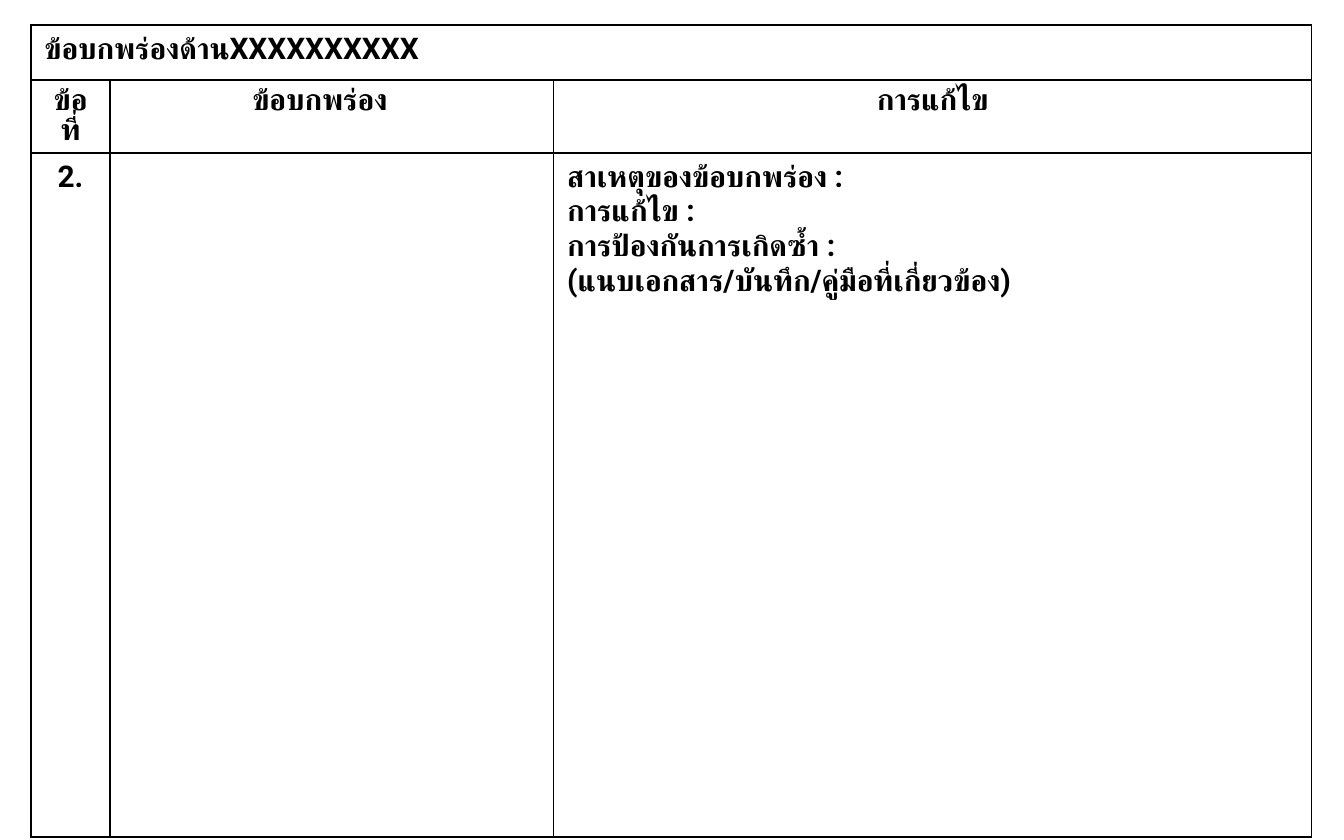
from lxml import etree
from pptx import Presentation
from pptx import util as u
from pptx.dml.color import RGBColor
from pptx.enum import text
from pptx.oxml.ns import qn

COLORS = {"ink": "000000", "paper": "FFFFFF"}
WIDTH, HEIGHT = 10, 6.25


class Deck:
    """Holds the text style and the current slide."""
    font, size, border = "Roboto", 16, 1

    def __init__(self, prs):
        self.prs = prs
        self.s = prs.slides.add_slide(prs.slide_layouts[6])

    def table(self, left, top, cols, rows):
        """Add a plain bordered table; left and top are shares of the slide."""
        x, y = int(self.prs.slide_width * left), int(self.prs.slide_height * top)
        frame = self.s.shapes.add_table(len(rows), len(cols), x, y,
                                        u.Inches(sum(cols)), u.Inches(sum(rows)))
        tbl = frame.table
        tbl.first_row = tbl.horz_banding = False
        for col, width in zip(tbl.columns, cols):
            col.width = u.Inches(width)
        for row, height in zip(tbl.rows, rows):
            row.height = u.Inches(height)
        for cell in tbl.iter_cells():
            self.borders(cell)
            cell.fill.solid()
            cell.fill.fore_color.rgb = RGBColor.from_string(COLORS["paper"])
        return tbl

    def borders(self, cell):
        tc_pr = cell._tc.get_or_add_tcPr()
        for side in ("a:lnL", "a:lnR", "a:lnT", "a:lnB"):
            ln = etree.SubElement(tc_pr, qn(side), w=str(u.Pt(self.border)))
            fill = etree.SubElement(ln, qn("a:solidFill"))
            etree.SubElement(fill, qn("a:srgbClr"), val=COLORS["ink"])

    def label(self, cell, lines, align=text.PP_ALIGN.LEFT, spacing=1.0):
        tf = cell.text_frame
        tf.text = "\n".join(lines)
        for p in tf.paragraphs:
            p.alignment = align
            p.line_spacing = spacing
            for r in p.runs:
                r.font.name, r.font.size, r.font.bold = self.font, u.Pt(self.size), True
                r.font.color.rgb = RGBColor.from_string(COLORS["ink"])
                # Thai takes the complex-script typeface
                etree.SubElement(r._r.get_or_add_rPr(), qn("a:cs"), typeface=self.font)


def main():
    prs = Presentation()
    prs.slide_width, prs.slide_height = u.Inches(WIDTH), u.Inches(HEIGHT)
    deck = Deck(prs)
    center = text.PP_ALIGN.CENTER

    # Table grid
    tbl = deck.table(0.023, 0.03, cols=(0.59, 3.3, 5.64), rows=(0.41, 0.36, 5.09))

    # Title row across all columns
    tbl.cell(0, 0).merge(tbl.cell(0, 2))
    deck.label(tbl.cell(0, 0), ["ข้อบกพร่องด้านXXXXXXXXXX"])

    # Column headings
    for i, heading in enumerate(("ข้อที่", "ข้อบกพร่อง", "การแก้ไข")):
        deck.label(tbl.cell(1, i), [heading], center, spacing=0.85)
    tbl.cell(1, 1).margin_right = u.Inches(0.28)

    # Finding and its correction
    deck.label(tbl.cell(2, 0), ["2."], center)
    deck.label(tbl.cell(2, 2), [
        "สาเหตุของข้อบกพร่อง :",
        "การแก้ไข :",
        "การป้องกันการเกิดซ้ำ :",
        "(แนบเอกสาร/บันทึก/คู่มือที่เกี่ยวข้อง)",
    ])

    prs.save("out.pptx")


if __name__ == "__main__":
    main()
